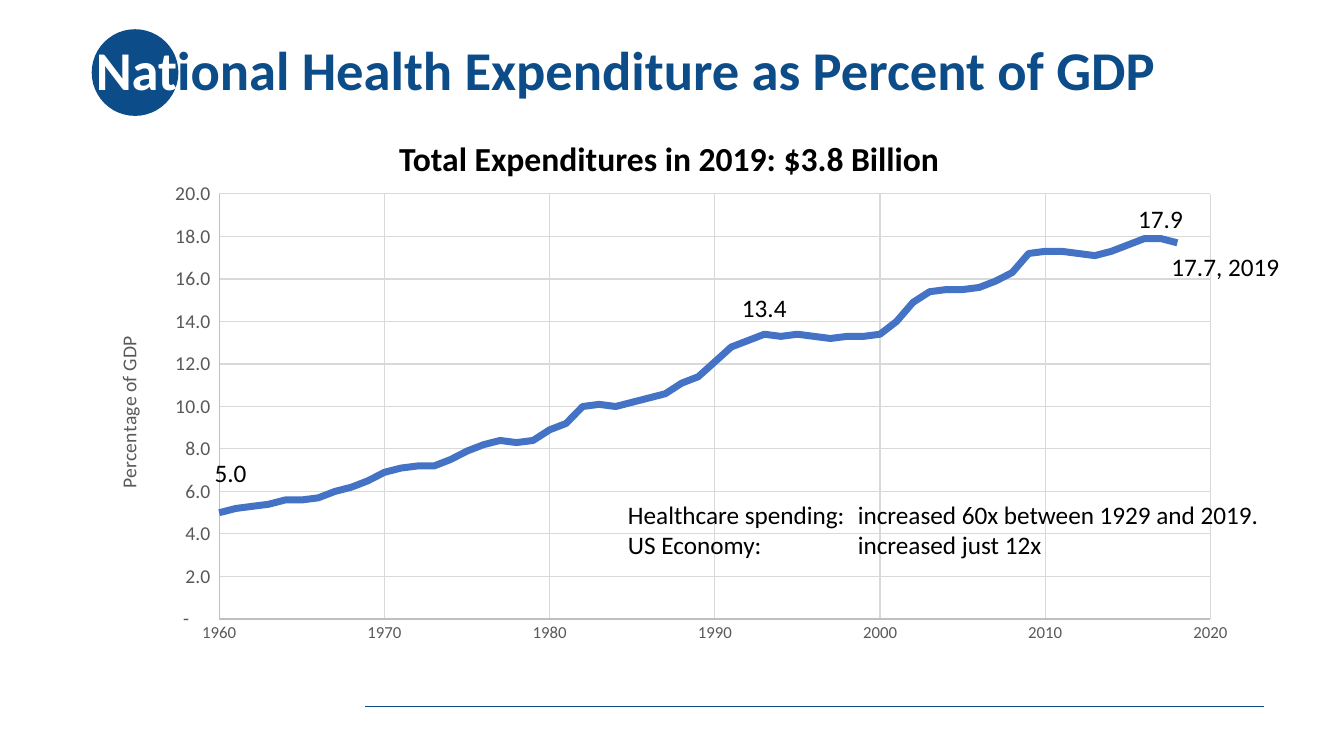
from lxml.etree import SubElement
from pptx import Presentation
from pptx.chart.data import XyChartData
from pptx.dml.color import RGBColor
from pptx.enum.chart import XL_CHART_TYPE, XL_TICK_MARK
from pptx.enum.shapes import MSO_CONNECTOR, MSO_SHAPE
from pptx.enum.text import MSO_ANCHOR, MSO_AUTO_SIZE, PP_ALIGN
from pptx.oxml.ns import qn
from pptx.util import Inches, Pt

NAVY = RGBColor(0x0C, 0x4C, 0x88)
WHITE = RGBColor(0xFF, 0xFF, 0xFF)
BLACK = RGBColor(0, 0, 0)
BLUE = RGBColor(0x44, 0x72, 0xC4)
GRAY = RGBColor(0x59, 0x59, 0x59)
AXIS = RGBColor(0xBF, 0xBF, 0xBF)
GRID = RGBColor(0xD9, 0xD9, 0xD9)
FONT = "Calibri"

TITLE = [("Nat", WHITE), ("ional Health Expenditure as Percent of GDP", NAVY)]
START = 1960
SHARES = [
    5, 5.2, 5.3, 5.4, 5.6, 5.6, 5.7, 6, 6.2, 6.5,
    6.9, 7.1, 7.2, 7.2, 7.5, 7.9, 8.2, 8.4, 8.3, 8.4,
    8.9, 9.2, 10, 10.1, 10, 10.2, 10.4, 10.6, 11.1, 11.4,
    12.1, 12.8, 13.1, 13.4, 13.3, 13.4, 13.3, 13.2, 13.3, 13.3,
    13.4, 14, 14.9, 15.4, 15.5, 15.5, 15.6, 15.9, 16.3, 17.2,
    17.3, 17.3, 17.2, 17.1, 17.3, 17.6, 17.9, 17.9, 17.7,
]
NOTES = [
    ("5.0", 2.03, 4.49, 0.52, 0.4, 18, False),
    ("13.4", 7.26, 2.85, 0.65, 0.4, 18, False),
    ("17.9", 11.19, 1.97, 0.65, 0.4, 18, False),
    ("17.7, 2019", 11.52, 2.44, 1.28, 0.4, 18, False),
    ("Healthcare spending:\tincreased 60x between 1929 and 2019.\n"
     "US Economy:\tincreased just 12x", 6.13, 4.9, 6.52, 0.71, 18, False),
    ("Total Expenditures in 2019: $3.8 Billion", 3.86, 1.32, 5.61, 0.5, 24, True),
]
TAB = Inches(2.28)
PLOT = {"x": 0.109, "y": 0.043, "w": 0.855, "h": 0.886}


def style(font, size, color, bold=False):
    """Set the face, size, colour and weight of a font."""
    font.name, font.size, font.bold = FONT, Pt(size), bold
    font.color.rgb = color


def add_title(slide):
    """Fill the title placeholder and put the disc behind it."""
    title = slide.shapes.title
    title.left, title.top = Inches(0.85), Inches(0)
    title.width, title.height = Inches(11.5), Inches(1.45)
    frame = title.text_frame
    frame.vertical_anchor = MSO_ANCHOR.MIDDLE
    frame.auto_size = MSO_AUTO_SIZE.NONE
    frame.word_wrap = True
    para = frame.paragraphs[0]
    para.alignment, para.line_spacing = PP_ALIGN.LEFT, 0.9
    for text, color in TITLE:
        run = para.add_run()
        run.text = text
        style(run.font, 39, color, True)
    disc = slide.shapes.add_shape(
        MSO_SHAPE.OVAL, Inches(0.91), Inches(0.29), Inches(0.86), Inches(0.86))
    disc.shadow.inherit = False
    disc.fill.solid()
    disc.fill.fore_color.rgb = NAVY
    disc.line.fill.background()
    title.element.addprevious(disc.element)


def add_rule(slide):
    """Draw the thin line at the foot."""
    rule = slide.shapes.add_connector(
        MSO_CONNECTOR.STRAIGHT, Inches(3.62), Inches(7.01), Inches(12.54), Inches(7.01))
    rule.line.color.rgb, rule.line.width = NAVY, Pt(0.5)
    SubElement(rule.element.spPr, qn("a:effectLst"))


def set_axis(axis, low, high, step, size, code):
    """Scale one axis and format its labels, line and grid."""
    axis.minimum_scale, axis.maximum_scale, axis.major_unit = low, high, step
    axis.major_tick_mark = axis.minor_tick_mark = XL_TICK_MARK.NONE
    axis.has_major_gridlines = True
    for line, color in ((axis.format.line, AXIS), (axis.major_gridlines.format.line, GRID)):
        line.color.rgb, line.width = color, Pt(0.75)
    axis.tick_labels.number_format = code
    axis.tick_labels.number_format_is_linked = False
    style(axis.tick_labels.font, size, GRAY)


def add_plot(slide):
    """Add the smooth curve of yearly shares."""
    data = XyChartData()
    series = data.add_series("Series 1")
    for year, share in enumerate(SHARES, START):
        series.add_data_point(year, share)
    chart = slide.shapes.add_chart(
        XL_CHART_TYPE.XY_SCATTER_SMOOTH_NO_MARKERS,
        Inches(0.92), Inches(1.72), Inches(11.5), Inches(4.76), data).chart
    chart.has_legend = chart.has_title = False
    style(chart.font, 10, BLACK)
    plot = chart.plots[0]
    plot.vary_by_categories = False
    curve = plot.series[0]
    curve.smooth = True
    curve.format.line.color.rgb, curve.format.line.width = BLUE, Pt(5)
    set_axis(chart.category_axis, START, 2020, 10, 12, "General")
    shares = chart.value_axis
    set_axis(shares, 0, 20, 2, 14, '_(* #,##0.0_);_(* (#,##0.0);_(* "-"??_);_(@_)')
    para = shares.axis_title.text_frame.paragraphs[0]
    para.text = "Percentage of GDP"
    style(para.runs[0].font, 14, GRAY)
    area = chart.element.chart.plotArea
    for old in area.findall(qn("c:layout")):
        area.remove(old)
    layout = SubElement(area, qn("c:layout"))
    area.insert(0, layout)
    manual = SubElement(layout, qn("c:manualLayout"))
    parts = [("layoutTarget", "inner"), ("xMode", "edge"), ("yMode", "edge"), *PLOT.items()]
    for name, value in parts:
        SubElement(manual, qn(f"c:{name}")).set("val", str(value))


def add_note(slide, text, left, top, width, height, size, bold):
    """Add one unwrapped text box, with a tab stop where it is used."""
    box = slide.shapes.add_textbox(Inches(left), Inches(top), Inches(width), Inches(height))
    frame = box.text_frame
    frame.word_wrap = False
    frame.auto_size = MSO_AUTO_SIZE.SHAPE_TO_FIT_TEXT
    frame.text = text
    for para in frame.paragraphs:
        if "\t" in text:
            stops = SubElement(para._p.get_or_add_pPr(), qn("a:tabLst"))
            stop = SubElement(stops, qn("a:tab"))
            stop.set("pos", str(TAB))
            stop.set("algn", "l")
        for run in para.runs:
            style(run.font, size, BLACK, bold)


def main():
    """Build and save the slide."""
    deck = Presentation()
    deck.slide_width, deck.slide_height = Inches(13.33), Inches(7.5)
    slide = deck.slides.add_slide(deck.slide_layouts[5])
    add_title(slide)
    add_rule(slide)
    add_plot(slide)
    for note in NOTES:
        add_note(slide, *note)
    deck.save("out.pptx")


if __name__ == "__main__":
    main()
